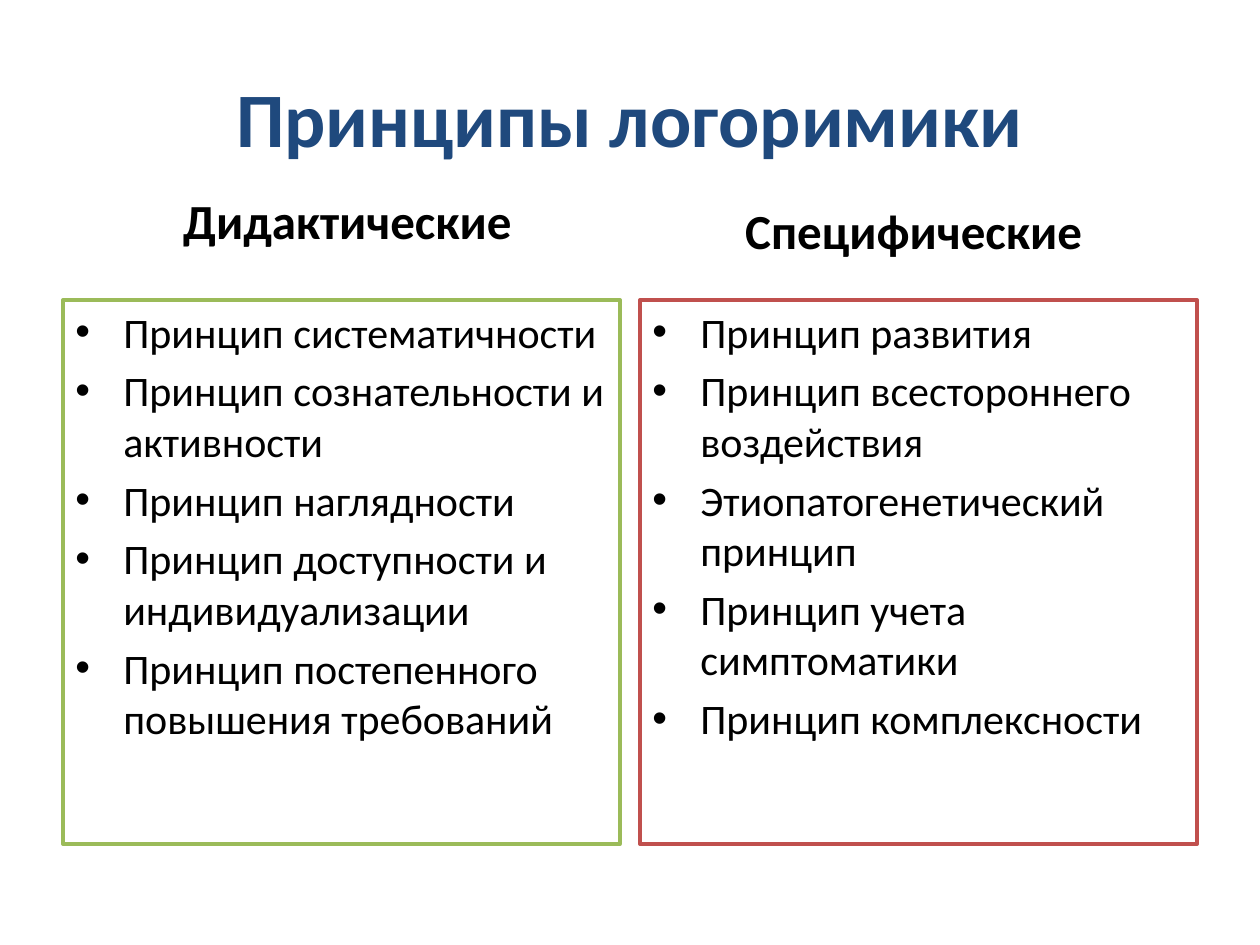
from dataclasses import dataclass

from lxml.etree import SubElement
from pptx import Presentation
from pptx.dml.color import RGBColor
from pptx.enum.shapes import MSO_SHAPE
from pptx.enum.text import MSO_ANCHOR, PP_ALIGN
from pptx.oxml.ns import qn
from pptx.util import Inches, Pt


@dataclass(frozen=True)
class Theme:
    font: str = "Calibri"
    title_color: RGBColor = RGBColor(0x1F, 0x49, 0x7D)
    text_color: RGBColor = RGBColor(0, 0, 0)
    panel_fill: RGBColor = RGBColor(0xFF, 0xFF, 0xFF)
    green: RGBColor = RGBColor(0x9B, 0xBB, 0x59)
    red: RGBColor = RGBColor(0xC0, 0x50, 0x4D)
    title_size: int = 44
    heading_size: int = 28
    body_size: int = 24


theme = Theme()


def add_styled_run(paragraph, text, size, color, bold=False):
    run = paragraph.add_run()
    run.text = text
    run.font.name = theme.font
    run.font.size = Pt(size)
    run.font.bold = bold
    run.font.color.rgb = color


def add_heading(left, top, width, height, anchor, text, size, color):
    heading = slide.shapes.add_textbox(
        Inches(left), Inches(top), Inches(width), Inches(height)
    )
    frame = heading.text_frame
    frame.word_wrap = True
    frame.vertical_anchor = anchor
    frame.paragraphs[0].alignment = PP_ALIGN.CENTER
    add_styled_run(frame.paragraphs[0], text, size, color, bold=True)


prs = Presentation()
prs.slide_width = Inches(10)
prs.slide_height = Inches(7.5)
slide = prs.slides.add_slide(prs.slide_layouts[6])

# Title
add_heading(0.5, 0.3, 9, 1.25, MSO_ANCHOR.MIDDLE,
            "Принципы логоримики", theme.title_size, theme.title_color)

# Columns: heading, heading left and top, panel left, outline, principles
column_width = 4.42
columns = [
    ("Дидактические ", 0.59, 1.33, 0.5, theme.green, [
        "Принцип систематичности",
        "Принцип сознательности и активности",
        "Принцип наглядности",
        "Принцип доступности и индивидуализации",
        "Принцип постепенного повышения требований",
    ]),
    ("Специфические", 5.04, 1.41, 5.08, theme.red, [
        "Принцип развития",
        "Принцип всестороннего воздействия",
        "Этиопатогенетический принцип",
        "Принцип учета симптоматики",
        "Принцип комплексности",
    ]),
]

for heading, heading_left, heading_top, panel_left, outline, principles in columns:
    add_heading(heading_left, heading_top, column_width, 0.7, MSO_ANCHOR.BOTTOM,
                heading, theme.heading_size, theme.text_color)

    # Outlined panel
    panel = slide.shapes.add_shape(
        MSO_SHAPE.RECTANGLE,
        Inches(panel_left), Inches(2.38), Inches(column_width), Inches(4.32),
    )
    panel.shadow.inherit = False
    panel.fill.solid()
    panel.fill.fore_color.rgb = theme.panel_fill
    panel.line.color.rgb = outline
    panel.line.width = Pt(2)

    # Bulleted principles
    frame = panel.text_frame
    frame.word_wrap = True
    frame.vertical_anchor = MSO_ANCHOR.TOP
    for index, principle in enumerate(principles):
        paragraph = frame.paragraphs[0] if index == 0 else frame.add_paragraph()
        paragraph.alignment = PP_ALIGN.LEFT
        if index:
            paragraph.space_before = Pt(theme.body_size * 0.2)
        properties = paragraph._p.get_or_add_pPr()
        properties.set("marL", str(Inches(0.38)))
        properties.set("indent", str(-Inches(0.38)))
        SubElement(properties, qn("a:buFont")).set("typeface", "Arial")
        SubElement(properties, qn("a:buChar")).set("char", "•")
        add_styled_run(paragraph, principle, theme.body_size, theme.text_color)

prs.save("out.pptx")
